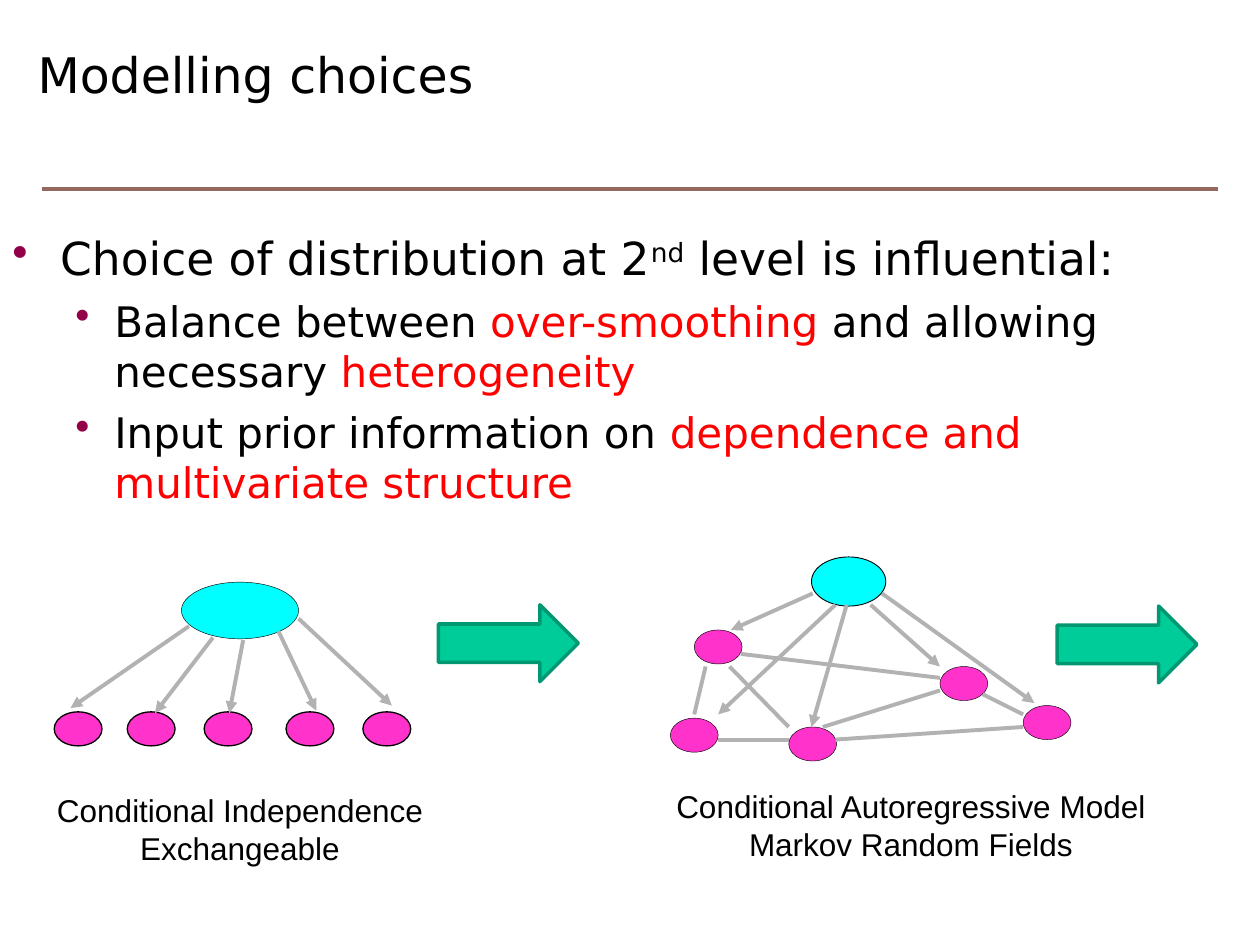
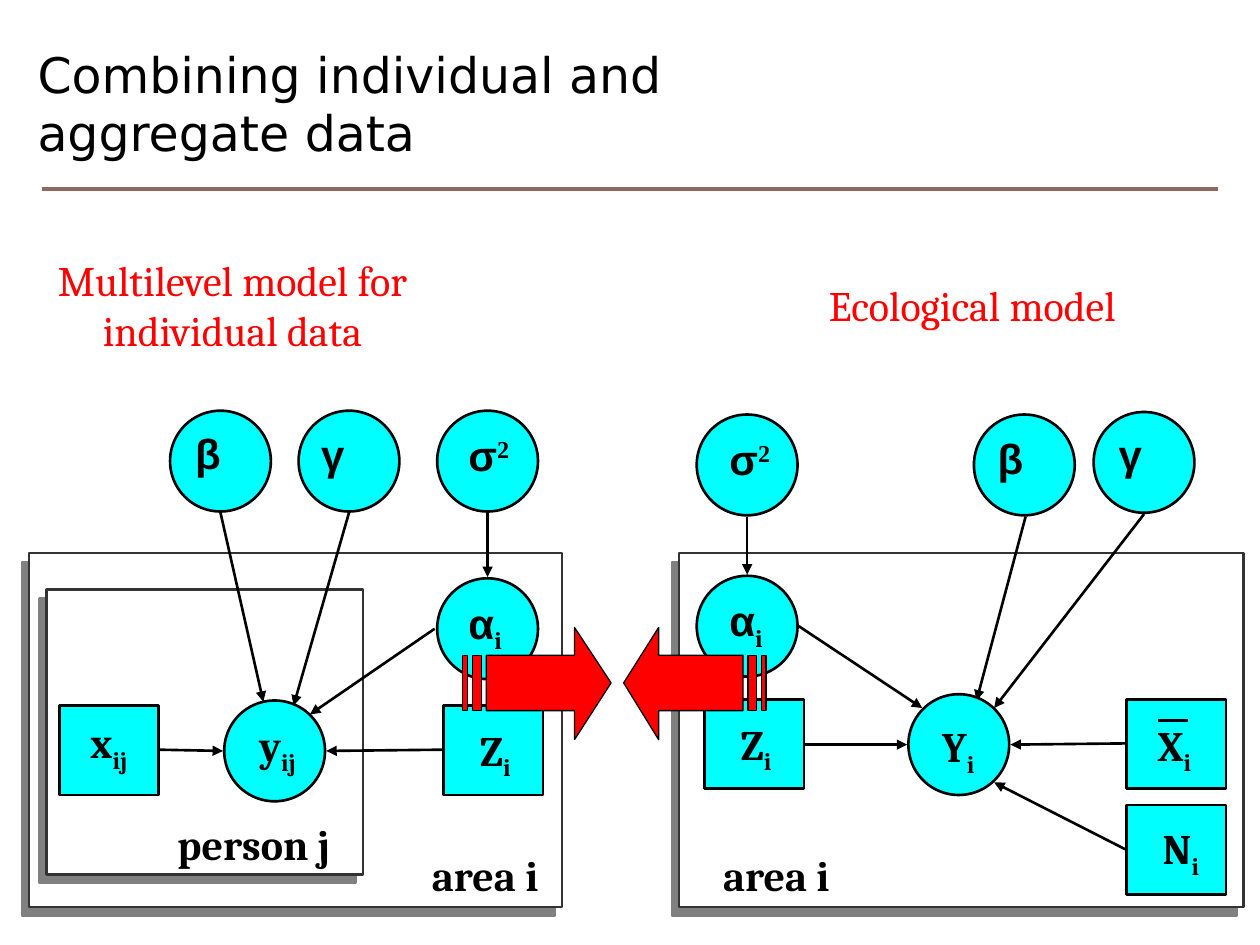
from lxml import etree
from pptx import Presentation
from pptx.dml.color import RGBColor
from pptx.enum.shapes import MSO_CONNECTOR, MSO_SHAPE
from pptx.enum.text import PP_ALIGN
from pptx.oxml.ns import qn
from pptx.util import Inches, Pt

STRAIGHT = MSO_CONNECTOR.STRAIGHT
OVAL = MSO_SHAPE.OVAL
RECTANGLE = MSO_SHAPE.RECTANGLE
RIGHT_ARROW = MSO_SHAPE.RIGHT_ARROW
LEFT, CENTER = PP_ALIGN.LEFT, PP_ALIGN.CENTER

BLACK = RGBColor(0x00, 0x00, 0x00)
WHITE = RGBColor(0xFF, 0xFF, 0xFF)
RED = RGBColor(0xFF, 0x00, 0x00)
CYAN = RGBColor(0x00, 0xFF, 0xFF)
PINK = RGBColor(0xFF, 0x33, 0xCC)
GREEN = RGBColor(0x00, 0xCC, 0x99)
DARK_GREEN = RGBColor(0x00, 0x97, 0x71)
EDGE_GRAY = RGBColor(0xB2, 0xB2, 0xB2)
FRAME_GRAY = RGBColor(0x33, 0x33, 0x33)
RULE_BROWN = RGBColor(0x91, 0x69, 0x5F)
BULLET_PURPLE = "920049"
SHADOW_GRAY = "808080"

TITLE_FORMAT = {"name": "DejaVu Sans", "size": Pt(28), "color": BLACK}
BODY_FORMAT = {"name": "DejaVu Sans", "size": Pt(24), "color": BLACK}
CAPTION_FORMAT = {"name": "Arial", "size": Pt(18), "color": BLACK}
HEADING_FORMAT = {"name": "Cambria", "size": Pt(24), "color": RED}
LABEL_FORMAT = {"name": "Cambria", "size": Pt(24), "color": BLACK, "bold": True}

CIRCLE_SIZE = (0.8, 0.8)
BOX_SIZE = (0.79, 0.71)


def add_child(parent, tag, **attributes):
    """Append a DrawingML element and return it."""
    child = etree.SubElement(parent, qn(tag))
    for name, value in attributes.items():
        child.set(name, str(value))
    return child


def format_run(run, values):
    """Apply a dict of format values to a run."""
    for name, value in values.items():
        if name == "color":
            run.font.color.rgb = value
        elif name == "baseline":
            run.font._element.set("baseline", str(value * 1000))
        else:
            setattr(run.font, name, value)


def add_runs(paragraph, runs, base_format):
    """Write (text, overrides) pairs into a paragraph."""
    for text, overrides in runs:
        run = paragraph.add_run()
        run.text = text
        format_run(run, {**base_format, **overrides})


def add_text(slide, area, lines, base_format, align=LEFT, wrap=True):
    """Add a text box with one paragraph for each list of runs."""
    frame = slide.shapes.add_textbox(*map(Inches, area)).text_frame
    frame.word_wrap = wrap
    for index, runs in enumerate(lines):
        paragraph = frame.add_paragraph() if index else frame.paragraphs[0]
        paragraph.alignment = align
        add_runs(paragraph, runs, base_format)
    return frame


def add_line(slide, start, end, color, width, arrow=False):
    """Add a straight line, with an arrowhead at its end if asked."""
    connector = slide.shapes.add_connector(STRAIGHT, *map(Inches, (*start, *end)))
    connector.line.color.rgb = color
    connector.line.width = Pt(width)
    properties = connector._element.spPr
    if arrow:
        add_child(properties.find(qn("a:ln")), "a:tailEnd", type="triangle")
    add_child(properties, "a:effectLst")


def style_shape(shape, fill, line, width):
    """Give a shape a plain fill and outline without shadow."""
    shape.shadow.inherit = False
    shape.fill.solid()
    shape.fill.fore_color.rgb = fill
    shape.line.color.rgb = line
    shape.line.width = Pt(width)


def add_shape(slide, kind, position, size, fill, line=BLACK, width=1.5):
    """Add a styled preset shape."""
    shape = slide.shapes.add_shape(kind, *map(Inches, (*position, *size)))
    style_shape(shape, fill, line, width)
    return shape


def add_frame(slide, position, size):
    """Add a white plate with a hard shadow to its lower left."""
    shape = add_shape(slide, RECTANGLE, position, size, WHITE, FRAME_GRAY)
    effects = shape._element.spPr.find(qn("a:effectLst"))
    shadow = add_child(effects, "a:outerShdw", dist=Pt(6.4), dir=129 * 60000,
                       algn="ctr", rotWithShape=0)
    add_child(shadow, "a:srgbClr", val=SHADOW_GRAY)


def add_label(slide, position, symbol, suffix=""):
    """Add a bold symbol with its subscript or power."""
    runs = [(symbol, {"name": "Arial"} if symbol in "αβγσ" else {})]
    if suffix == "2":
        runs.append((suffix, {"name": "Times New Roman", "baseline": 30}))
    elif suffix:
        runs.append((suffix, {"baseline": -25}))
    add_text(slide, (*position, 0.7, 0.5), [runs], LABEL_FORMAT)


def add_striped_arrow(slide, tail, tip):
    """Add a red striped arrow pointing from tail to tip."""
    scale = (tip - tail) / 1.18
    top, upper, middle, lower, bottom = 4.98, 5.2, 5.42, 5.64, 5.87
    outlines = [
        [(0.89, top), (0.89, upper), (0.19, upper), (0.19, lower),
         (0.89, lower), (0.89, bottom), (1.18, middle)],
        *([(left, upper), (left, lower), (right, lower), (right, upper)]
          for left, right in ((0.08, 0.15), (0, 0.04))),
    ]
    builder = None
    for outline in outlines:
        points = [(Inches(tail + x * scale), Inches(y)) for x, y in outline]
        if builder is None:
            builder = slide.shapes.build_freeform(*points[0])
        else:
            builder.move_to(*points[0])
        builder.add_line_segments(points[1:], close=True)
    style_shape(builder.convert_to_shape(), RED, BLACK, 0.75)


def add_slide(presentation, *title_lines):
    """Add a blank slide with the shared title and rule."""
    slide = presentation.slides.add_slide(presentation.slide_layouts[6])
    add_line(slide, (0.33, 1.5), (9.67, 1.5), RULE_BROWN, 1.75)
    lines = [[(line, {})] for line in title_lines]
    add_text(slide, (0.2, 0.3, 9, 1.25), lines, TITLE_FORMAT)
    return slide


def add_bullets(slide):
    """Add the bullet list on the choice of distribution."""
    red, large = {"color": RED}, {"size": Pt(26)}
    lines = [
        [("Choice of distribution at 2", large), ("nd", {**large, "baseline": 30}),
         (" level is influential:", large)],
        [("Balance between ", {}), ("over-smoothing", red),
         (" and allowing necessary ", {}), ("heterogeneity", red)],
        [("Input prior information on ", {}),
         ("dependence and multivariate structure", red)],
    ]
    frame = add_text(slide, (0, 1.78, 10, 3.86), lines, BODY_FORMAT)
    for index, paragraph in enumerate(frame.paragraphs):
        margin, indent = (0.81, -0.31) if index else (0.38, -0.38)
        if index:
            paragraph.level = 1
            paragraph.space_before = Pt(5.8)
        properties = paragraph._p.get_or_add_pPr()
        properties.set("marL", str(Inches(margin)))
        properties.set("indent", str(Inches(indent)))
        add_child(add_child(properties, "a:buClr"), "a:srgbClr", val=BULLET_PURPLE)
        add_child(properties, "a:buChar", char="•")


def add_network(slide, root, root_size, root_width, nodes, node_width, arrows, links=()):
    """Add a root node with arrows to child nodes and links between them."""
    for position in nodes:
        add_shape(slide, OVAL, position, (0.38, 0.27), PINK, width=node_width)
    add_shape(slide, OVAL, root, root_size, CYAN, width=root_width)
    for start, end in links:
        add_line(slide, start, end, EDGE_GRAY, 2.25)
    for start, end in arrows:
        add_line(slide, start, end, EDGE_GRAY, 2.25, arrow=True)


def add_graph(slide, arrows, nodes):
    """Add arrows and labelled nodes of a graphical model."""
    for start, end in arrows:
        add_line(slide, start, end, BLACK, 1.5, arrow=True)
    for kind, position, label_position, *label in nodes:
        size = CIRCLE_SIZE if kind == OVAL else BOX_SIZE
        add_shape(slide, kind, position, size, CYAN)
        add_label(slide, label_position, *label)


def build_modelling_choices(presentation):
    """Build the slide on modelling choices."""
    slide = add_slide(presentation, "Modelling choices")
    add_bullets(slide)
    add_network(
        slide, (1.44, 4.62), (0.93, 0.45), 0.25,
        [(left, 5.65) for left in (0.43, 1.01, 1.62, 2.27, 2.88)], 0.75,
        [((1.5, 4.97), (0.56, 5.62)), ((1.69, 5.06), (1.23, 5.66)),
         ((1.93, 5.08), (1.82, 5.66)), ((2.21, 5.01), (2.51, 5.64)),
         ((2.37, 4.91), (3.11, 5.6))])
    add_network(
        slide, (6.44, 4.42), (0.59, 0.39), 0.5,
        [(5.32, 5.7), (6.26, 5.77), (7.46, 5.29), (8.12, 5.6), (5.51, 5)], 0.25,
        [((6.72, 4.8), (6.44, 5.77)), ((6.91, 4.8), (7.46, 5.29)),
         ((7, 4.71), (8.21, 5.58)), ((6.63, 4.8), (5.7, 5.67)),
         ((6.45, 4.71), (5.8, 5))],
        [((5.7, 5.87), (6.26, 5.87)), ((6.63, 5.87), (8.12, 5.77)),
         ((6.53, 5.77), (7.46, 5.48)), ((5.6, 5.29), (5.51, 5.67)),
         ((5.88, 5.19), (7.46, 5.38)), ((5.79, 5.29), (6.26, 5.77)),
         ((7.8, 5.51), (8.12, 5.67))])
    for position in ((3.48, 4.8), (8.39, 4.81)):
        add_shape(slide, RIGHT_ARROW, position, (1.11, 0.61), GREEN, DARK_GREEN, 2)
    captions = [
        ((0.34, 6.23, 3.13, 0.71), "Conditional Independence", "Exchangeable"),
        ((5.25, 6.2, 3.96, 0.71), "Conditional Autoregressive Model",
         "Markov Random Fields"),
    ]
    for area, *lines in captions:
        add_text(slide, area, [[(line, {})] for line in lines], CAPTION_FORMAT,
                 CENTER, wrap=False)


def build_combining_data(presentation):
    """Build the slide on combining individual and aggregate data."""
    slide = add_slide(presentation, "Combining individual and", "aggregate data")
    add_text(slide, (0.32, 1.97, 3.05, 0.9),
             [[("Multilevel model for individual data", {})]], HEADING_FORMAT, CENTER)
    add_text(slide, (6.48, 2.17, 2.76, 0.5), [[("Ecological model", {})]], HEADING_FORMAT)
    add_frame(slide, (5.39, 4.39), (4.48, 2.81))
    add_frame(slide, (0.23, 4.39), (4.23, 2.81))
    add_frame(slide, (0.37, 4.68), (2.51, 2.26))
    add_graph(
        slide,
        [((1.75, 4.07), (2.09, 5.57)), ((2.77, 4.07), (2.33, 5.6)),
         ((3.87, 4.07), (3.87, 4.58)), ((3.45, 4.99), (2.46, 5.67)),
         ((1.26, 5.95), (1.77, 5.96)), ((3.51, 5.95), (2.59, 5.96))],
        [(OVAL, (1.35, 3.26), (1.45, 3.34), "β"),
         (OVAL, (2.37, 3.26), (2.45, 3.35), "γ"),
         (OVAL, (3.47, 3.26), (3.62, 3.36), "σ", "2"),
         (OVAL, (3.47, 4.59), (3.62, 4.69), "α", "i"),
         (OVAL, (1.78, 5.56), (1.96, 5.66), "y", "ij"),
         (RECTANGLE, (0.47, 5.6), (0.62, 5.64), "x", "ij"),
         (RECTANGLE, (3.52, 5.6), (3.71, 5.7), "Z", "i")])
    add_graph(
        slide,
        [((5.93, 4.1), (5.93, 4.56)), ((6.34, 4.97), (7.32, 5.62)),
         ((8.14, 4.1), (7.75, 5.56)), ((9.08, 4.08), (7.89, 5.62)),
         ((6.39, 5.91), (7.2, 5.91)), ((8.93, 5.9), (8.02, 5.91)),
         ((8.93, 6.74), (7.89, 6.21))],
        [(OVAL, (5.53, 3.29), (5.69, 3.39), "σ", "2"),
         (OVAL, (7.73, 3.29), (7.82, 3.38), "β"),
         (OVAL, (8.68, 3.27), (8.78, 3.35), "γ"),
         (OVAL, (5.53, 4.57), (5.69, 4.67), "α", "i"),
         (OVAL, (7.21, 5.51), (7.38, 5.67), "Y", "i"),
         (RECTANGLE, (5.59, 5.55), (5.78, 5.65), "Z", "i"),
         (RECTANGLE, (8.94, 5.55), (9.09, 5.66), "X", "i"),
         (RECTANGLE, (8.94, 6.39), (9.13, 6.48), "N", "i")])
    add_line(slide, (9.19, 5.72), (9.43, 5.72), BLACK, 1.5)
    plate_names = [((3.33, 6.69, 1.08, 0.5), "area i"),
                   ((5.64, 6.69, 1.08, 0.5), "area i"),
                   ((1.31, 6.45, 1.62, 0.5), "person j")]
    for area, name in plate_names:
        add_text(slide, area, [[(name, {})]], LABEL_FORMAT)
    add_striped_arrow(slide, 3.67, 4.85)
    add_striped_arrow(slide, 6.08, 4.95)


def main():
    """Build and save the presentation."""
    presentation = Presentation()
    presentation.slide_width = Inches(10)
    presentation.slide_height = Inches(7.5)
    build_modelling_choices(presentation)
    build_combining_data(presentation)
    presentation.save("out.pptx")


if __name__ == "__main__":
    main()
